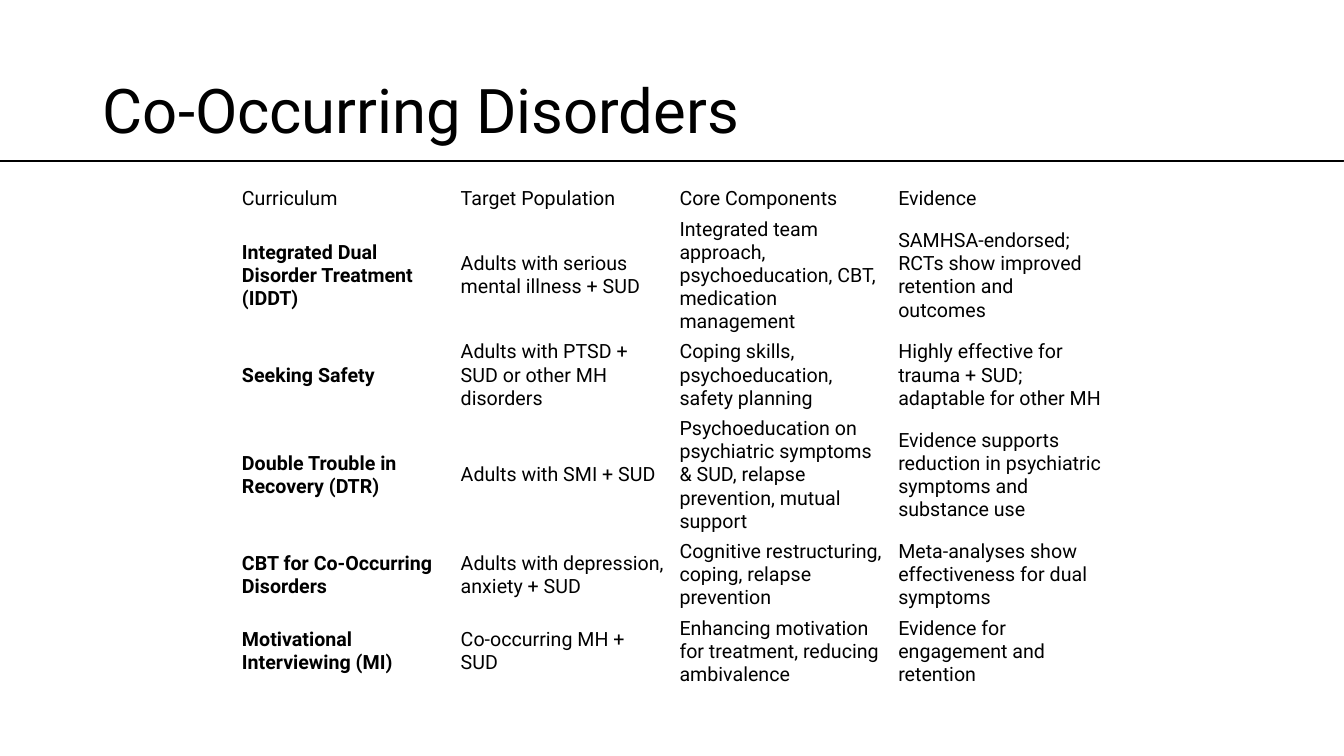
from pptx import Presentation
from pptx.dml.color import RGBColor
from pptx.enum.shapes import MSO_SHAPE
from pptx.enum.text import MSO_ANCHOR, MSO_AUTO_SIZE, PP_ALIGN
from pptx.util import Inches, Pt

FONT = "Roboto"
BLACK = "000000"
ROW_HEIGHTS = [0.3, 1.22, 0.76, 1.22, 0.76, 0.76]
CURRICULA = [
    ["Curriculum", "Target Population", "Core Components", "Evidence"],
    ["Integrated Dual Disorder Treatment (IDDT)",
     "Adults with serious mental illness + SUD",
     "Integrated team approach, psychoeducation, CBT, medication management",
     "SAMHSA-endorsed; RCTs show improved retention and outcomes"],
    ["Seeking Safety",
     "Adults with PTSD + SUD or other MH disorders",
     "Coping skills, psychoeducation, safety planning",
     "Highly effective for trauma + SUD; adaptable for other MH"],
    ["Double Trouble in Recovery (DTR)",
     "Adults with SMI + SUD",
     "Psychoeducation on psychiatric symptoms & SUD, relapse prevention, mutual support",
     "Evidence supports reduction in psychiatric symptoms and substance use"],
    ["CBT for Co-Occurring Disorders",
     "Adults with depression, anxiety + SUD",
     "Cognitive restructuring, coping, relapse prevention",
     "Meta-analyses show effectiveness for dual symptoms"],
    ["Motivational Interviewing (MI)",
     "Co-occurring MH + SUD",
     "Enhancing motivation for treatment, reducing ambivalence",
     "Evidence for engagement and retention"],
]


def color(value):
    return RGBColor.from_string(value)


def format_text(para, size, bold=False):
    para.alignment = PP_ALIGN.LEFT
    for span in para.runs:
        span.font.name = FONT
        span.font.size = Pt(size)
        span.font.bold = bold
        span.font.color.rgb = color(BLACK)


def add_title(page, left, top, width, height):
    title = page.shapes.title
    title.left, title.top = Inches(left), Inches(top)
    title.width, title.height = Inches(width), Inches(height)
    frame = title.text_frame
    frame.text = "Co-Occurring Disorders"
    frame.auto_size = MSO_AUTO_SIZE.NONE
    frame.vertical_anchor = MSO_ANCHOR.MIDDLE
    para = frame.paragraphs[0]
    para.line_spacing = 0.9
    format_text(para, 44)


def add_curricula(page, left, top, width):
    table = page.shapes.add_table(
        len(CURRICULA), len(CURRICULA[0]), Inches(left), Inches(top),
        Inches(width), Inches(sum(ROW_HEIGHTS))).table
    table.first_row = False
    table.horz_banding = False
    for row, height in zip(table.rows, ROW_HEIGHTS):
        row.height = Inches(height)
    for row_index, entries in enumerate(CURRICULA):
        for column_index, entry in enumerate(entries):
            cell = table.cell(row_index, column_index)
            cell.fill.background()
            cell.vertical_anchor = MSO_ANCHOR.MIDDLE
            cell.margin_left, cell.margin_right = Inches(0.08), Inches(0.06)
            cell.margin_top, cell.margin_bottom = Inches(0.04), Inches(0.03)
            cell.text_frame.text = entry
            is_name = row_index > 0 and column_index == 0
            format_text(cell.text_frame.paragraphs[0], 14, is_name)


def add_divider(page, left, top, width, height):
    divider = page.shapes.add_shape(
        MSO_SHAPE.RECTANGLE, Inches(left), Inches(top), Inches(width), Inches(height))
    divider.shadow.inherit = False
    divider.fill.solid()
    divider.fill.fore_color.rgb = color(BLACK)
    divider.line.color.rgb = color(BLACK)
    divider.line.width = Pt(0.75)


def main():
    deck = Presentation()
    deck.slide_width, deck.slide_height = Inches(13.33), Inches(7.5)
    page = deck.slides.add_slide(deck.slide_layouts.get_by_name("Title Only"))
    add_title(page, 0.92, 0.4, 11.5, 1.45)
    add_curricula(page, 2.32, 1.82, 8.68)
    add_divider(page, 0, 1.59, 13.33, 0.01)
    deck.save("out.pptx")


if __name__ == "__main__":
    main()
